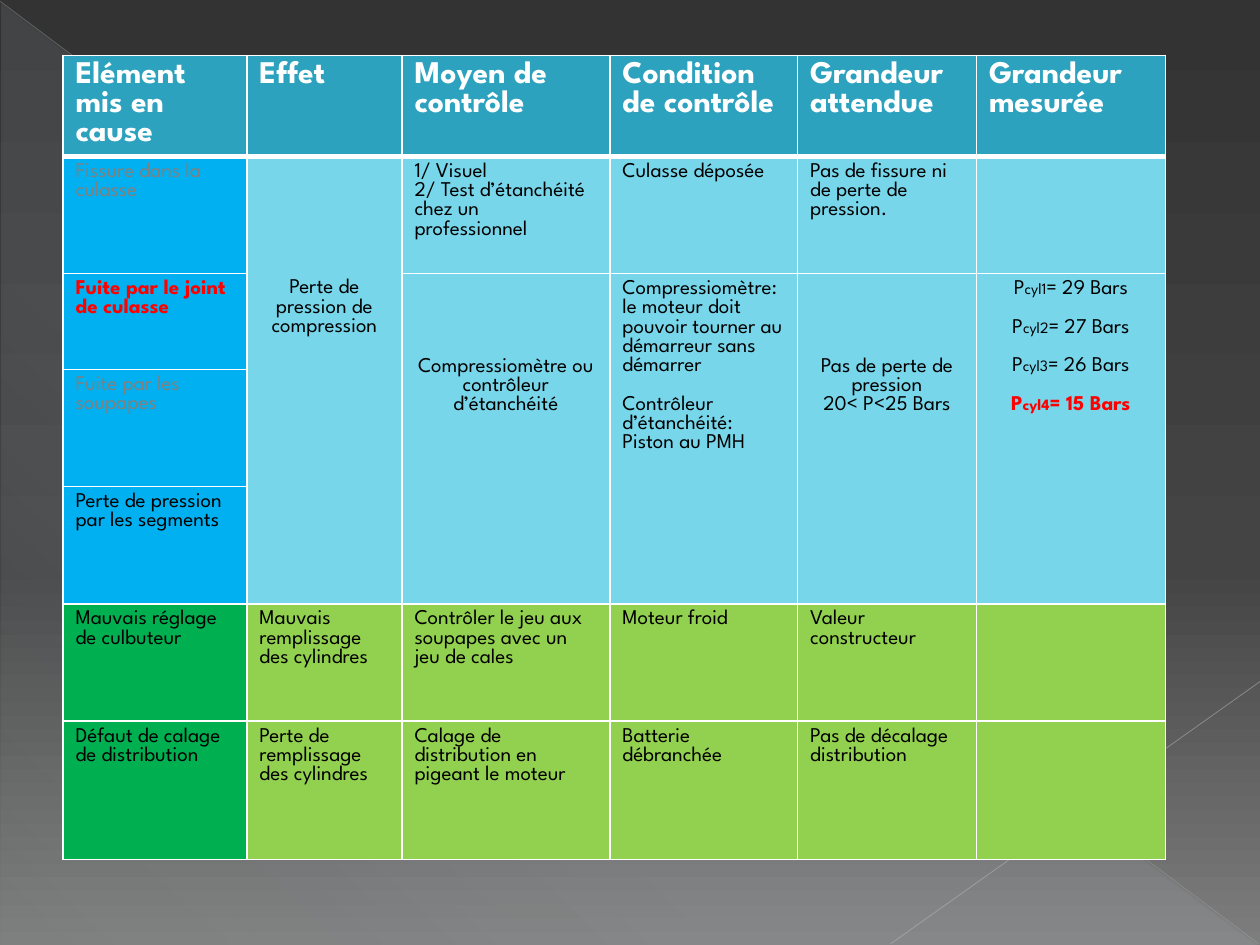
from lxml import etree
from pptx import Presentation
from pptx.dml.color import RGBColor
from pptx.enum.shapes import MSO_CONNECTOR, MSO_SHAPE
from pptx.enum.text import PP_ALIGN
from pptx.oxml.ns import qn
from pptx.util import Pt

LEFT, CENTER = PP_ALIGN.LEFT, PP_ALIGN.CENTER
TRIANGLE, STRAIGHT = MSO_SHAPE.RIGHT_TRIANGLE, MSO_CONNECTOR.STRAIGHT
BLANK_LAYOUT = 6
FONT = "League Spartan"
LINE_GAP = 11.1
COLORS = {
    "white": "FFFFFF", "black": "000000", "gray": "808080", "red": "FF0000",
    "header": "2DA2BF", "blue": "00B0F0", "pale_blue": "78D6EA",
    "green": "00B050", "pale_green": "92D050",
    "top": "333333", "middle": "444444", "bottom": "7D7D7D",
    "sheen": "DEF5FA", "long_line": "B9B9B9", "short_line": "C1C1C1",
}
COLUMN_WIDTHS = [105.1, 88.6, 118.8, 107.3, 102.2, 108]
ROW_HEIGHTS = [57.6, 67, 54.8, 67, 67, 67, 79.2]
HEADERS = ["Elément mis en cause", "Effet", "Moyen de contrôle",
           "Condition de contrôle", "Grandeur attendue", "Grandeur mesurée"]
CAUSES = [
    ("Fissure dans la culasse", {"color": "gray"}),
    ("Fuite par le joint de culasse", {"color": "red", "bold": True}),
    ("Fuite par les soupapes", {"color": "gray"}),
    ("Perte de pression par les segments", {}),
    ("Mauvais réglage de culbuteur", {}),
    ("Défaut de calage de distribution", {}),
]
# (row, column): paragraphs of the remaining plain cells
PLAIN_CELLS = {
    (1, 2): ["1/ Visuel", "2/ Test d’étanchéité chez un professionnel"],
    (1, 3): ["Culasse déposée"],
    (1, 4): ["Pas de fissure ni de perte de pression."],
    (5, 1): ["Mauvais remplissage des cylindres"],
    (5, 2): ["Contrôler le jeu aux soupapes avec un jeu de cales"],
    (5, 3): ["Moteur froid"],
    (5, 4): ["Valeur constructeur"],
    (6, 1): ["Perte de remplissage des cylindres"],
    (6, 2): ["Calage de distribution en pigeant le moteur"],
    (6, 3): ["Batterie débranchée"],
    (6, 4): ["Pas de décalage distribution"],
}
PRESSURES = [29, 27, 26, 15]


def rgb(name):
    return RGBColor.from_string(COLORS[name])


def add_alpha(color_element, percent):
    etree.SubElement(color_element, qn("a:alpha"), val=str(percent * 1000))


def set_gradient(fill, element, stops, angle):
    """Fill with stops of (position, color name, opacity), in percent."""
    fill.gradient()
    gradient = next(element.iter(qn("a:gradFill")))
    stop_list = gradient.find(qn("a:gsLst"))
    for stop in list(stop_list):
        stop_list.remove(stop)
    for position, color, opacity in stops:
        stop = etree.SubElement(stop_list, qn("a:gs"), pos=str(position * 1000))
        color_element = etree.SubElement(stop, qn("a:srgbClr"), val=COLORS[color])
        if opacity < 100:
            add_alpha(color_element, opacity)
    gradient.find(qn("a:lin")).set("ang", str(angle * 60000))


def add_line(slide, start, end, color, width, opacity):
    line = slide.shapes.add_connector(STRAIGHT, *map(Pt, start + end))
    line.line.color.rgb = rgb(color)
    line.line.width = Pt(width)
    properties = line.element.spPr
    add_alpha(next(properties.iter(qn("a:srgbClr"))), opacity)
    etree.SubElement(properties, qn("a:effectLst"))


def add_backdrop(slide, left, top, width, height):
    set_gradient(slide.background.fill, slide.element,
                 [(0, "top", 100), (60, "middle", 100), (100, "bottom", 100)], 90)
    triangle = slide.shapes.add_shape(
        TRIANGLE, Pt(left + 0.7), Pt(top + 1.4), Pt(width - 1.4), Pt(height - 1.4))
    triangle.shadow.inherit = False
    triangle.line.fill.background()
    set_gradient(triangle.fill, triangle.element,
                 [(0, "sheen", 10), (70, "sheen", 8), (100, "sheen", 1)], 133)
    right, bottom = left + width, top + height - 0.7
    add_line(slide, (left, top + 0.7), (right - 0.7, bottom), "long_line", 0.39, 35)
    add_line(slide, (right, top + 389.5), (left + 509, bottom), "short_line", 0.47, 45)


def write(cell, paragraphs, size=12, color="black", bold=False, align=LEFT,
          lines_above=0, gaps=()):
    """Write paragraphs, each a string or a list of (text, size) runs.

    lines_above lowers the text; gaps lists paragraphs preceded by an open line.
    """
    cell.margin_top = Pt(3.6 + lines_above * LINE_GAP)
    frame = cell.text_frame
    for index, content in enumerate(paragraphs):
        paragraph = frame.paragraphs[0] if index == 0 else frame.add_paragraph()
        paragraph.alignment = align
        if index in gaps:
            paragraph.space_before = Pt(LINE_GAP)
        runs = [(content, size)] if isinstance(content, str) else content
        for text, run_size in runs:
            run = paragraph.add_run()
            run.text = text
            run.font.name = FONT
            run.font.size = Pt(run_size)
            run.font.bold = bold
            run.font.color.rgb = rgb(color)


def write_pressures(cell):
    """One line per cylinder, the last one flagged in red."""
    lines = [[("P", 12), (f"cyl{number}", 9), (f"= {value} Bars", 12)]
             for number, value in enumerate(PRESSURES, 1)]
    write(cell, lines[:-1], align=CENTER, gaps=(1, 2))
    paragraph = cell.text_frame.add_paragraph()
    paragraph.alignment = CENTER
    paragraph.space_before = Pt(LINE_GAP)
    for text, size in lines[-1]:
        run = paragraph.add_run()
        run.text = text
        run.font.name = FONT
        run.font.size = Pt(size)
        run.font.bold = True
        run.font.color.rgb = rgb("red")


def style_cell(cell, row, column):
    if row == 0:
        color = "header"
    elif row < 5:
        color = "pale_blue" if column else "blue"
    else:
        color = "pale_green" if column else "green"
    cell.fill.solid()
    cell.fill.fore_color.rgb = rgb(color)
    widths = {"L": 1, "R": 1, "T": 3 if row == 1 else 1, "B": 3 if row == 0 else 1}
    properties = cell._tc.get_or_add_tcPr()
    for index, (side, width) in enumerate(widths.items()):
        border = etree.Element(qn(f"a:ln{side}"), w=str(Pt(width)))
        solid = etree.SubElement(border, qn("a:solidFill"))
        etree.SubElement(solid, qn("a:srgbClr"), val=COLORS["white"])
        properties.insert(index, border)


def add_diagnosis_table(slide, left, top, width, height):
    table = slide.shapes.add_table(
        len(ROW_HEIGHTS), len(COLUMN_WIDTHS),
        Pt(left), Pt(top), Pt(width), Pt(height)).table
    for column, column_width in zip(table.columns, COLUMN_WIDTHS):
        column.width = Pt(column_width)
    for row, row_height in zip(table.rows, ROW_HEIGHTS):
        row.height = Pt(row_height)
    for row in range(len(ROW_HEIGHTS)):
        for column in range(len(COLUMN_WIDTHS)):
            style_cell(table.cell(row, column), row, column)
    table.cell(1, 1).merge(table.cell(4, 1))
    for column in range(2, 6):
        table.cell(2, column).merge(table.cell(4, column))

    for column, header in enumerate(HEADERS):
        write(table.cell(0, column), [header], size=18, color="white", bold=True)
    for row, (cause, style) in enumerate(CAUSES, 1):
        write(table.cell(row, 0), [cause], **style)
    for (row, column), paragraphs in PLAIN_CELLS.items():
        write(table.cell(row, column), paragraphs)
    write(table.cell(1, 1), ["Perte de pression de compression"],
          align=CENTER, lines_above=6)
    write(table.cell(2, 2), ["Compressiomètre ou contrôleur d’étanchéité"],
          align=CENTER, lines_above=4)
    write(table.cell(2, 3),
          ["Compressiomètre: le moteur doit pouvoir tourner au démarreur sans démarrer",
           "Contrôleur d’étanchéité:", "Piston au PMH"], gaps=(1,))
    write(table.cell(2, 4), ["Pas de perte de pression", "20< P<25 Bars"],
          align=CENTER, lines_above=4)
    write_pressures(table.cell(2, 5))


def main():
    presentation = Presentation()
    presentation.slide_width, presentation.slide_height = Pt(720), Pt(540)
    slide = presentation.slides.add_slide(presentation.slide_layouts[BLANK_LAYOUT])
    add_backdrop(slide, 0, 0, 720, 540)
    add_diagnosis_table(slide, 36, 31.7, sum(COLUMN_WIDTHS), sum(ROW_HEIGHTS))
    presentation.save("out.pptx")


if __name__ == "__main__":
    main()
